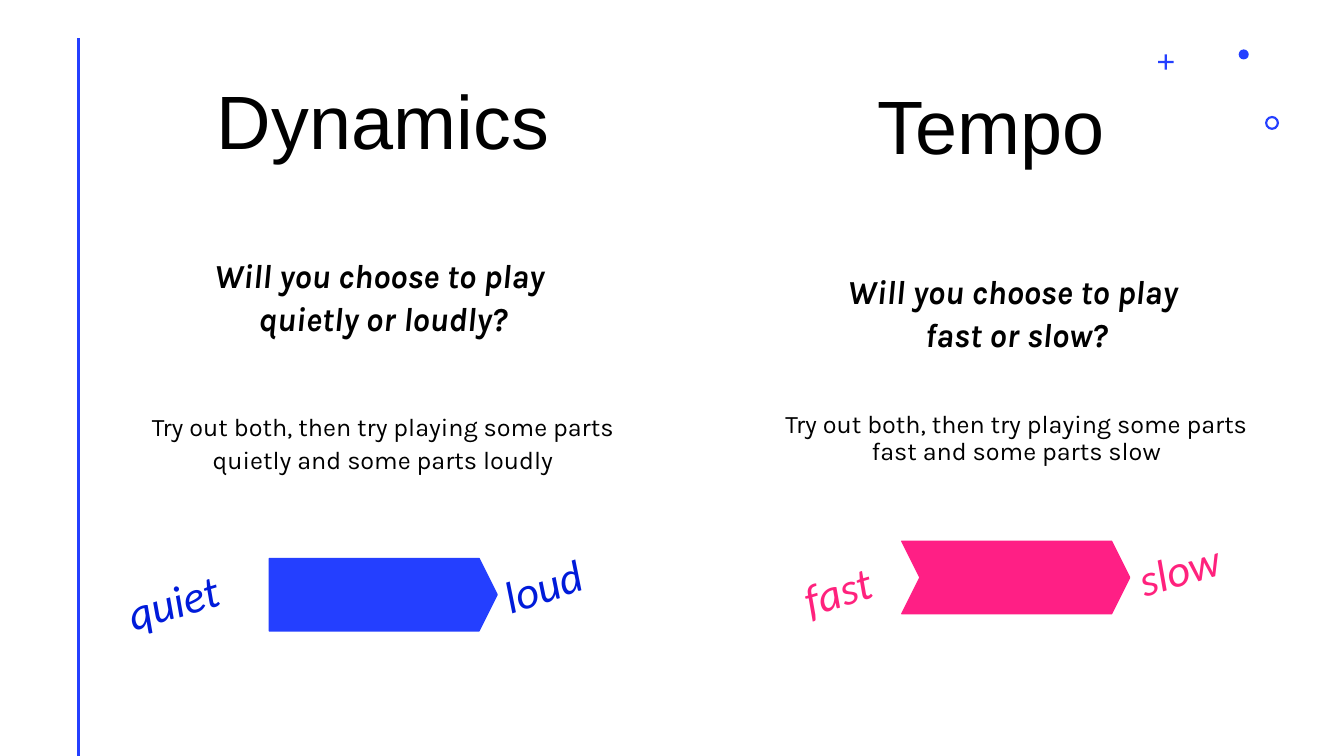
import pptx
import pptx.util
import pptx.dml.color
import pptx.enum.shapes
import pptx.enum.text
from lxml import etree

Pt = pptx.util.Pt
SHAPE = pptx.enum.shapes.MSO_SHAPE
ANCHOR = pptx.enum.text.MSO_ANCHOR
ALIGN = pptx.enum.text.PP_ALIGN

BLUE, PINK, BLACK = "243FFF", "FF1F85", "000000"
LABEL_BLUE, LABEL_PINK = "001BDA", "FF227D"


def color(hex_string):
    return pptx.dml.color.RGBColor.from_string(hex_string)


def add_text(slide, box, lines, anchor=ANCHOR.TOP, rotation=0):
    """Each line: text, size, font, colour, bold, italic, alignment, spacing, space before."""
    holder = slide.shapes.add_textbox(*map(Pt, box))
    holder.rotation = rotation
    frame = holder.text_frame
    frame.word_wrap = True
    frame.vertical_anchor = anchor
    for i, (text, size, font, hue, bold, italic, align, spacing, before) in enumerate(lines):
        paragraph = frame.add_paragraph() if i else frame.paragraphs[0]
        paragraph.text = text
        paragraph.alignment = align
        paragraph.line_spacing = spacing
        paragraph.space_before = Pt(before)
        paragraph.font.size = Pt(size)
        paragraph.font.name = font
        paragraph.font.bold = bold
        paragraph.font.italic = italic
        paragraph.font.color.rgb = color(hue)


def add_solid(slide, kind, box, hue, adjustment=None, outline=None):
    solid = slide.shapes.add_shape(kind, *map(Pt, box))
    solid.shadow.inherit = False
    solid.fill.solid()
    solid.fill.fore_color.rgb = color(hue)
    if outline:
        solid.line.color.rgb = color(hue)
        solid.line.width = Pt(outline)
    else:
        solid.line.fill.background()
    if adjustment is not None:
        solid.adjustments[0] = adjustment


def add_decoration(slide, left, top):
    # Vertical rule down the left edge
    rule = slide.shapes.add_connector(
        pptx.enum.shapes.MSO_CONNECTOR.STRAIGHT, Pt(56.2), Pt(27.5), Pt(56.2), Pt(540))
    rule.line.color.rgb = color(BLUE)
    rule.line.width = Pt(2)
    etree.SubElement(rule._element.spPr, pptx.oxml.ns.qn("a:effectLst"))
    # Plus, ring and dot in the top right corner
    add_solid(slide, SHAPE.CROSS, (left, top + 3.5, 11, 11), BLUE, 0.43)
    add_solid(slide, SHAPE.DONUT, (left + 76.3, top + 47.5, 10, 10), BLUE, 0.16)
    add_solid(slide, SHAPE.OVAL, (left + 57.5, top, 7.2, 7.2), BLUE)


def add_panel(slide, box, title, title_at, question, advice, advice_spacing,
              advice_gap, arrow, arrow_top, arrow_hue, label_hue, labels):
    left, top, width, height = box
    # Heading
    add_text(slide, (left + title_at[0], top + title_at[1], 406, 104.4),
             [(title, 54, "Arial", BLACK, False, False, ALIGN.CENTER, 0.9, 0)],
             ANCHOR.MIDDLE)
    # Question and advice
    lines = [(part, 24, "Karla", BLACK, True, True, ALIGN.CENTER, 1.07, 0)
             for part in question]
    lines.append((advice, 18, "Karla", BLACK, False, False, ALIGN.CENTER,
                  advice_spacing, advice_gap))
    add_text(slide, box, lines)
    # Arrow with a tilted label at each end
    arrow_left, arrow_top = left + 98.2, top + arrow_top
    add_solid(slide, arrow, (arrow_left, arrow_top, 162.7, 51.8), arrow_hue, 0.25, 1)
    for text, dx, dy, label_width, rotation in labels:
        add_text(slide, (arrow_left + dx, arrow_top + dy, label_width, 46),
                 [(text, 32, "Calibri", label_hue, False, True, ALIGN.LEFT, 1.0, 0)],
                 rotation=rotation)


def main():
    deck = pptx.Presentation()
    deck.slide_width, deck.slide_height = Pt(960), Pt(540)
    slide = deck.slides.add_slide(deck.slide_layouts[6])
    add_decoration(slide, 827.3, 35.3)
    add_panel(
        slide, (94.2, 176.4, 358.6, 180), "Dynamics", (-23.7, -139),
        ["Will you choose to play ", "quietly or loudly?"],
        "Try out both, then try playing some parts quietly and some parts loudly",
        1.07, 51, SHAPE.PENTAGON, 222.5, BLUE, LABEL_BLUE,
        [("quiet", -109.6, 3.6, 108, 343.1), ("loud", 159, -8.7, 101.5, 341.6)])
    add_panel(
        slide, (546, 187.8, 360, 160), "Tempo", (-41.3, -146.8),
        ["Will you choose to play ", "fast or slow?"],
        "Try out both, then try playing some parts fast and some parts slow",
        0.9, 41, SHAPE.CHEVRON, 198.8, PINK, LABEL_PINK,
        [("fast", -78.3, 6.5, 101.5, 343.1), ("slow", 160.8, -7.2, 101.5, 343.1)])
    deck.save("out.pptx")


if __name__ == "__main__":
    main()
